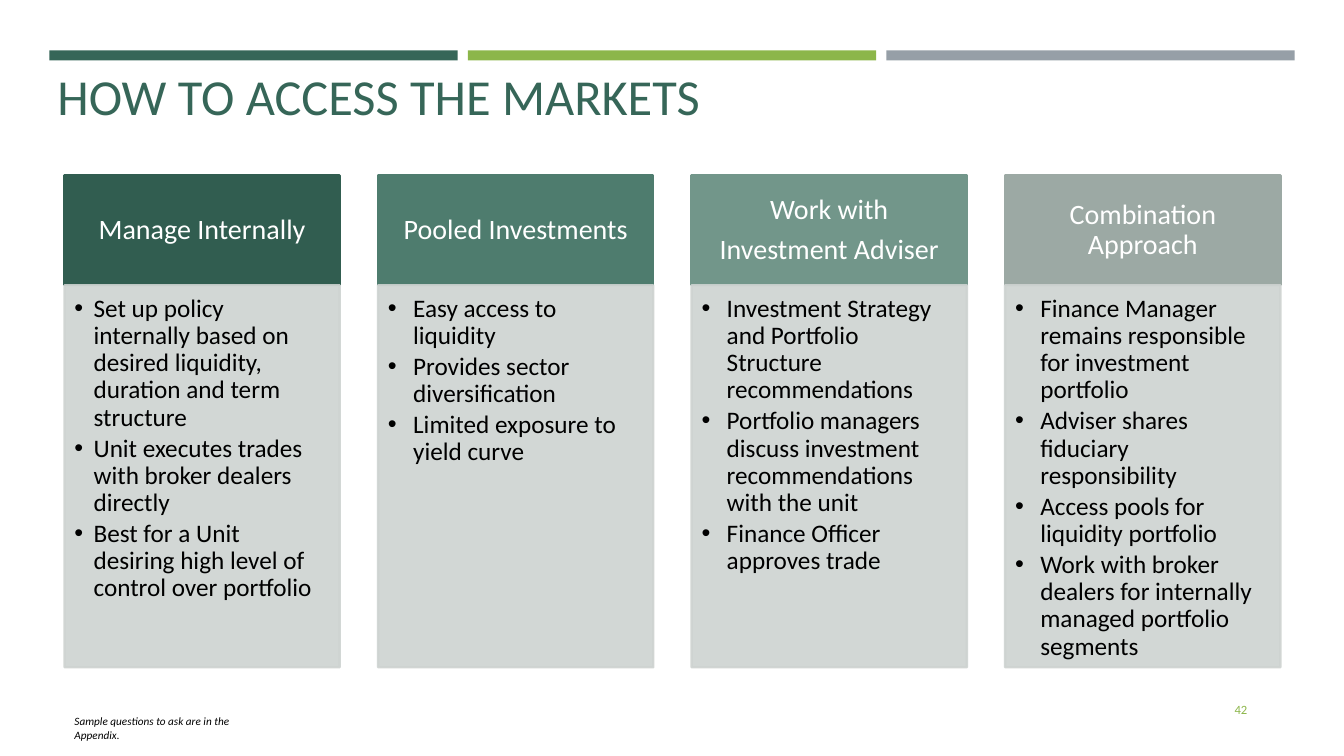
"""Build the slide comparing four ways to access the markets."""
import pptx
import pptx.dml.color
import pptx.enum.shapes
import pptx.enum.text
import pptx.oxml.ns
import pptx.util
from lxml import etree

RGBColor = pptx.dml.color.RGBColor
ALIGN = pptx.enum.text.PP_ALIGN
ANCHOR = pptx.enum.text.MSO_ANCHOR
Inches = pptx.util.Inches
Pt = pptx.util.Pt
qn = pptx.oxml.ns.qn

GREEN = RGBColor(0x36, 0x66, 0x58)
LIME = RGBColor(0x8C, 0xB6, 0x4A)
SLATE = RGBColor(0x96, 0x9F, 0xA7)
PANEL = RGBColor(0xCE, 0xD3, 0xD1)
WHITE = RGBColor(0xFF, 0xFF, 0xFF)
BLACK = RGBColor(0, 0, 0)
DEEP_GREEN = RGBColor(0x31, 0x5D, 0x50)
MID_GREEN = RGBColor(0x4E, 0x7C, 0x6E)
SOFT_GREEN = RGBColor(0x72, 0x96, 0x8A)
GREY_GREEN = RGBColor(0x9C, 0xA9, 0xA4)

TITLE = "HOW TO ACCESS THE MARKETS"
FOOTNOTE = "Sample questions to ask are in the Appendix."
PAGE_NUMBER = "42"
BAR_COLOURS = [GREEN, LIME, SLATE]
APPROACHES = [
    (["Manage Internally"], DEEP_GREEN, 0.19, [
        "Set up policy internally based on desired liquidity, duration and term structure",
        "Unit executes trades with broker dealers directly",
        "Best for a Unit desiring high level of control over portfolio"]),
    (["Pooled Investments"], MID_GREEN, 0.25, [
        "Easy access to liquidity",
        "Provides sector diversification",
        "Limited exposure to yield curve"]),
    (["Work with", "Investment Adviser"], SOFT_GREEN, 0.25, [
        "Investment Strategy and Portfolio Structure recommendations",
        "Portfolio managers discuss investment recommendations with the unit",
        "Finance Officer approves trade"]),
    (["Combination Approach"], GREY_GREEN, 0.25, [
        "Finance Manager remains responsible for investment portfolio",
        "Adviser shares fiduciary responsibility",
        "Access pools for liquidity portfolio",
        "Work with broker dealers for internally managed portfolio segments"]),
]

BAR_LEFT, BAR_TOP, BAR_WIDTH, BAR_HEIGHT, BAR_PITCH = 0.49, 0.5, 4.05, 0.1, 4.15
COLUMN_LEFT, COLUMN_WIDTH, COLUMN_PITCH = 0.64, 2.73, 3.11
HEADING_TOP, HEADING_HEIGHT, BODY_HEIGHT = 1.74, 1.09, 3.79


def write(shape, lines, size, colour, align=ALIGN.LEFT, anchor=ANCHOR.TOP,
          insets=(0.1, 0.05, 0.1, 0.05), spacing=1.0, after=0, hang=0, italic=False):
    """Fill a shape with formatted paragraphs, bulleted when hang is given."""
    frame = shape.text_frame
    frame.text = "\n".join(lines)
    frame.word_wrap = True
    frame.auto_size = pptx.enum.text.MSO_AUTO_SIZE.NONE
    frame.vertical_anchor = anchor
    (frame.margin_left, frame.margin_top,
     frame.margin_right, frame.margin_bottom) = map(Inches, insets)
    for paragraph in frame.paragraphs:
        paragraph.alignment = align
        paragraph.line_spacing = spacing
        paragraph.space_before = Pt(0)
        paragraph.space_after = Pt(after)
        font = paragraph.runs[0].font
        font.name, font.size, font.italic = "Calibri", Pt(size), italic
        font.color.rgb = colour
        if hang:
            properties = paragraph._p.get_or_add_pPr()
            properties.set("marL", str(Inches(hang)))
            properties.set("indent", str(-Inches(hang)))
            etree.SubElement(properties, qn("a:buFont")).set("typeface", "Arial")
            etree.SubElement(properties, qn("a:buChar")).set("char", "•")


def add_block(slide, left, top, width, height, colour, outline=0, opacity=100):
    """Add a flat rectangle, optionally outlined and translucent."""
    block = slide.shapes.add_shape(
        pptx.enum.shapes.MSO_SHAPE.RECTANGLE, *map(Inches, (left, top, width, height)))
    block.shadow.inherit = False
    block.fill.solid()
    block.fill.fore_color.rgb = colour
    if outline:
        block.line.width = Pt(outline)
        block.line.color.rgb = colour
    else:
        block.line.fill.background()
    if opacity < 100:
        for tint in block._element.spPr.iter(qn("a:srgbClr")):
            etree.SubElement(tint, qn("a:alpha")).set("val", str(opacity * 1000))
    return block


def main():
    """Lay out the slide and save it."""
    deck = pptx.Presentation()
    deck.slide_width, deck.slide_height = Inches(13.33), Inches(7.5)
    slide = deck.slides.add_slide(deck.slide_layouts[5])

    for index, colour in enumerate(BAR_COLOURS):
        add_block(slide, BAR_LEFT + index * BAR_PITCH, BAR_TOP, BAR_WIDTH, BAR_HEIGHT, colour)

    title = slide.shapes.title
    title.left, title.top, title.width, title.height = map(Inches, (0.47, 0, 12.06, 1.3))
    write(title, [TITLE], 36, GREEN, anchor=ANCHOR.BOTTOM)

    for index, (heading_lines, colour, hang, points) in enumerate(APPROACHES):
        left = COLUMN_LEFT + index * COLUMN_PITCH
        heading = add_block(slide, left, HEADING_TOP, COLUMN_WIDTH, HEADING_HEIGHT,
                            colour, outline=1.75)
        write(heading, heading_lines, 20, WHITE, align=ALIGN.CENTER, anchor=ANCHOR.MIDDLE,
              insets=(0.16, 0.09, 0.16, 0.09), spacing=0.9, after=7)
        body = add_block(slide, left, HEADING_TOP + HEADING_HEIGHT, COLUMN_WIDTH, BODY_HEIGHT,
                         PANEL, outline=1.75, opacity=90)
        write(body, points, 18, BLACK, insets=(0.1, 0.1, 0.14, 0.16),
              spacing=0.9, after=2.7, hang=hang)

    footnote = slide.shapes.add_textbox(*map(Inches, (COLUMN_LEFT, 7.04, 2.12, 0.24)))
    write(footnote, [FOOTNOTE], 8, BLACK, italic=True)
    page_number = slide.shapes.add_textbox(*map(Inches, (11.32, 6.84, 1.15, 0.4)))
    write(page_number, [PAGE_NUMBER], 9, LIME, align=ALIGN.RIGHT, anchor=ANCHOR.MIDDLE)

    deck.save("out.pptx")


if __name__ == "__main__":
    main()
